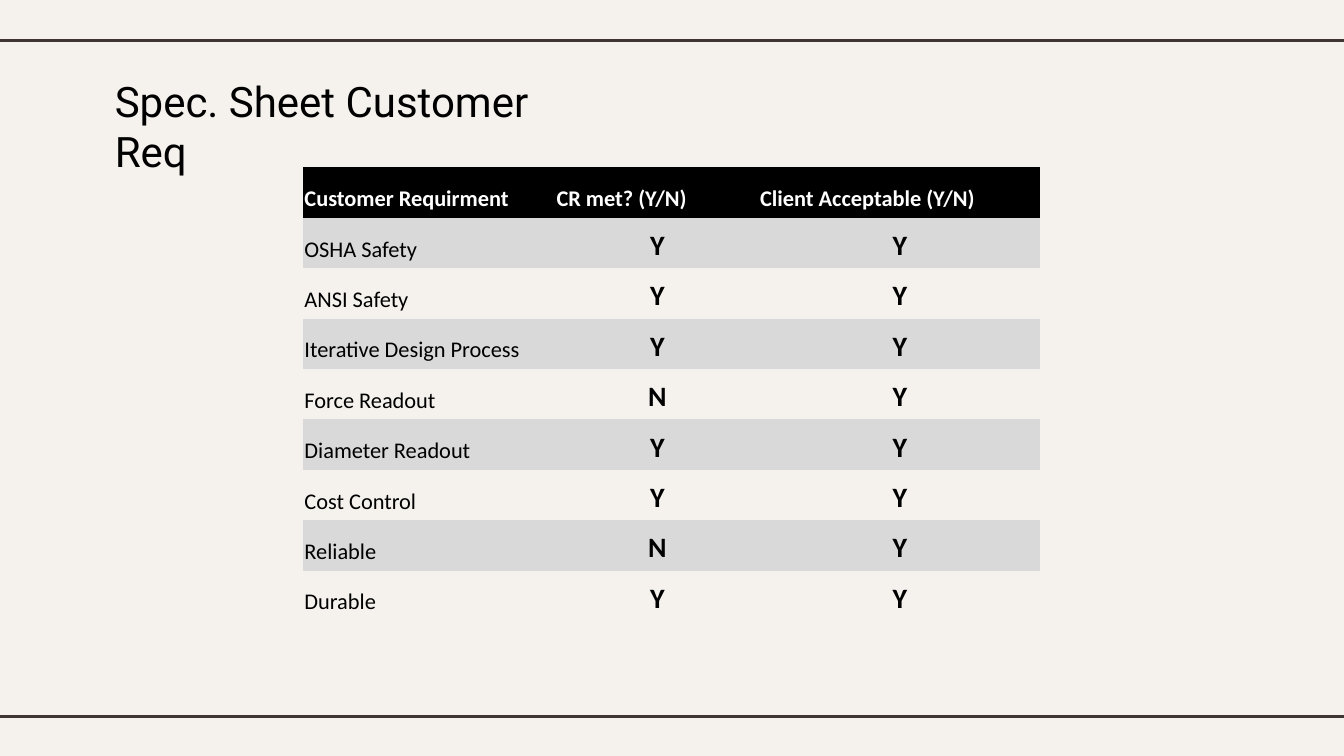
from dataclasses import dataclass

from lxml import etree
from pptx import Presentation
from pptx.dml.color import RGBColor
from pptx.enum import shapes, text
from pptx.oxml import ns
from pptx.util import Inches, Pt


@dataclass(frozen=True)
class Theme:
    background: str = "F5F2EE"
    rule: str = "3F3533"
    ink: str = "000000"
    header_ink: str = "FFFFFF"
    header_fill: str = "000000"
    band_fill: str = "D9D9D9"
    title_font: str = "Roboto"
    table_font: str = "Calibri"
    title_size: int = 30
    body_size: int = 16
    mark_size: int = 20
    rule_width: float = 2.25


THEME = Theme()
HEADERS = ("Customer Requirment", "CR met? (Y/N)", "Client Acceptable (Y/N)")
REQUIREMENTS = (
    ("OSHA Safety", "Y", "Y"),
    ("ANSI Safety", "Y", "Y"),
    ("Iterative Design Process", "Y", "Y"),
    ("Force Readout", "N", "Y"),
    ("Diameter Readout", "Y", "Y"),
    ("Cost Control", "Y", "Y"),
    ("Reliable", "N", "Y"),
    ("Durable", "Y", "Y"),
)
COLUMN_WIDTHS = (2.5, 2.02, 2.79)
ROW_HEIGHT = 0.5


def write_text(frame, content, *, font, size, color=THEME.ink, bold=False,
               align=text.PP_ALIGN.LEFT):
    paragraph = frame.paragraphs[0]
    paragraph.alignment = align
    run = paragraph.add_run()
    run.text = content
    run.font.name = font
    run.font.size = Pt(size)
    run.font.bold = bold
    run.font.color.rgb = RGBColor.from_string(color)


def add_rule(slide, y):
    """Draw a horizontal line that runs past both slide edges."""
    line = slide.shapes.add_connector(
        shapes.MSO_CONNECTOR.STRAIGHT,
        Inches(-0.11), Inches(y), Inches(13.44), Inches(y))
    line.line.color.rgb = RGBColor.from_string(THEME.rule)
    line.line.width = Pt(THEME.rule_width)
    etree.SubElement(line._element.spPr, ns.qn("a:effectLst"))


def add_title(slide, content):
    box = slide.shapes.add_textbox(
        Inches(1.04), Inches(0.65), Inches(4.65), Inches(0.84))
    frame = box.text_frame
    frame.word_wrap = True
    frame.margin_left = frame.margin_right = Inches(0.1)
    frame.margin_top = frame.margin_bottom = Inches(0.1)
    write_text(frame, content, font=THEME.title_font, size=THEME.title_size)


def clear_borders(cell):
    properties = cell._tc.get_or_add_tcPr()
    for position, side in enumerate(("lnL", "lnR", "lnT", "lnB")):
        border = etree.Element(ns.qn(f"a:{side}"), w="0")
        etree.SubElement(border, ns.qn("a:noFill"))
        properties.insert(position, border)


def format_cell(cell, fill):
    cell.vertical_anchor = text.MSO_ANCHOR.BOTTOM
    cell.margin_left = cell.margin_right = cell.margin_top = Inches(0.01)
    cell.margin_bottom = Inches(0.05)
    if fill:
        cell.fill.solid()
        cell.fill.fore_color.rgb = RGBColor.from_string(fill)
    else:
        cell.fill.background()
    clear_borders(cell)


def text_format(row, column):
    if row == 0:
        return dict(size=THEME.body_size, color=THEME.header_ink, bold=True)
    if column == 0:
        return dict(size=THEME.body_size)
    return dict(size=THEME.mark_size, bold=True, align=text.PP_ALIGN.CENTER)


def row_fill(row):
    if row == 0:
        return THEME.header_fill
    return THEME.band_fill if row % 2 else None


def add_requirements_table(slide):
    rows = (HEADERS, *REQUIREMENTS)
    table = slide.shapes.add_table(
        len(rows), len(HEADERS), Inches(3.01), Inches(1.66),
        Inches(sum(COLUMN_WIDTHS)), Inches(ROW_HEIGHT * len(rows))).table
    for column, width in zip(table.columns, COLUMN_WIDTHS):
        column.width = Inches(width)
    for row, values in enumerate(rows):
        for column, value in enumerate(values):
            cell = table.cell(row, column)
            format_cell(cell, row_fill(row))
            write_text(cell.text_frame, value, font=THEME.table_font,
                       **text_format(row, column))


def main():
    presentation = Presentation()
    presentation.slide_width = Inches(13.33)
    presentation.slide_height = Inches(7.5)
    slide = presentation.slides.add_slide(presentation.slide_layouts[6])
    slide.background.fill.solid()
    slide.background.fill.fore_color.rgb = RGBColor.from_string(THEME.background)

    for y in (0.4, 7.11):
        add_rule(slide, y)
    add_title(slide, "Spec. Sheet Customer Req")
    add_requirements_table(slide)
    presentation.save("out.pptx")


if __name__ == "__main__":
    main()
